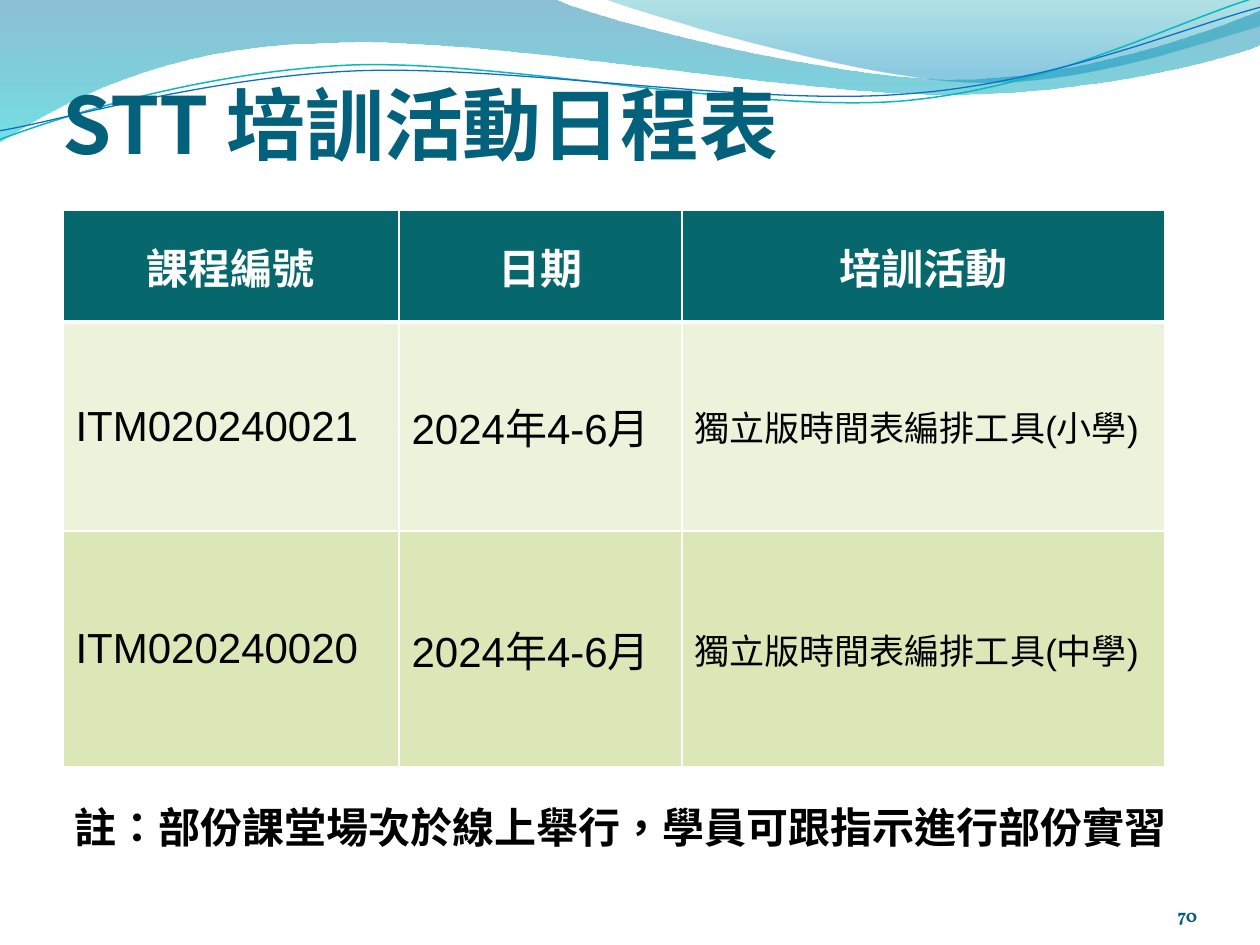
import lxml.etree
import pptx
import pptx.dml.color
import pptx.enum.text
import pptx.oxml.ns
import pptx.util

RGBColor = pptx.dml.color.RGBColor
ALIGN = pptx.enum.text.PP_ALIGN
ANCHOR = pptx.enum.text.MSO_ANCHOR
qn = pptx.oxml.ns.qn

EMU_PER_PX = 914400 / 126

WHITE = RGBColor(0xFF, 0xFF, 0xFF)
BLACK = RGBColor(0x00, 0x00, 0x00)
TITLE_BLUE = RGBColor(0x04, 0x61, 0x7B)
NUMBER_BLUE = RGBColor(0x04, 0x5D, 0x75)
HEADER_TEAL = RGBColor(0x06, 0x68, 0x6C)
ROW_FILLS = [RGBColor(0xED, 0xF3, 0xDB), RGBColor(0xDB, 0xE7, 0xB6)]
DEEP_BLUE = RGBColor(0x00, 0x74, 0xA1)
CYAN = RGBColor(0x00, 0xC6, 0xCF)
TEAL = RGBColor(0x00, 0xA1, 0xA9)
SKY_BLUE = RGBColor(0x00, 0x8B, 0xBF)
LINE_CYAN = RGBColor(0x0A, 0xB8, 0xBF)
LINE_BLUE = RGBColor(0x0F, 0x6F, 0xC6)

CJK_FONT = "Noto Sans CJK SC"

# Waves: a start point, then line ends (2 numbers) or Bezier curves (6 numbers)
# Filled waves carry gradient stops: position, colour, opacity in percent
FILLED_WAVES = [
    ([(0, 0), (554, -1), (600, 21, 837, 79, 955, 79),
      (1075, 79, 1207, 33, 1260, 11), (1261, 45),
      (1239, 55, 1096, 96, 940, 94), (784, 94, 481, 35, 324, 43),
      (163, 45, 58, 105, -1, 142), (0, 0)],
     [(0, DEEP_BLUE, 45), (1, CYAN, 55)]),
    ([(604, -1), (641, 14, 859, 78, 969, 82),
      (1079, 87, 1211, 40, 1260, 26), (1260, 0), (604, -1)],
     [(0, TEAL, 30), (0.8, SKY_BLUE, 45)]),
]
LINE_ROTATION = 357.3
LINE_WAVES = [
    ([(-3, 110), (59, 90, 200, 52, 350, 52), (498, 53, 745, 118, 897, 114),
      (1048, 109, 1184, 45, 1260, 27)], LINE_CYAN, 0.85),
    ([(-2, 101), (58, 94, 207, 57, 357, 58), (508, 59, 751, 112, 902, 107),
      (1052, 104, 1187, 53, 1263, 37)], LINE_BLUE, 0.75),
]

HEADERS = ["課程編號", "日期", "培訓活動"]
COURSES = [
    ["ITM020240021", "2024年4-6月", "獨立版時間表編排工具(小學)"],
    ["ITM020240020", "2024年4-6月", "獨立版時間表編排工具(中學)"],
]
COLUMN_WIDTHS = [336, 283, 483]
ROW_HEIGHTS = [112, 209, 236]
BODY_SIZES = [24, 24, 20]


def px(length):
    return pptx.util.Emu(round(length * EMU_PER_PX))


def write_text(frame, text, size, color, font, bold=False, align=ALIGN.LEFT):
    paragraph = frame.paragraphs[0]
    paragraph.alignment = align
    run = paragraph.add_run()
    run.text = text
    run.font.size = pptx.util.Pt(size)
    run.font.bold = bold
    run.font.color.rgb = color
    run.font.name = font
    properties = run.font._element
    properties.set("lang", "zh-TW")
    if font == CJK_FONT:
        lxml.etree.SubElement(properties, qn("a:ea")).set("typeface", font)


def add_text_box(slide, box, text, insets=None, anchor=ANCHOR.TOP, wrap=True,
                 **text_format):
    frame = slide.shapes.add_textbox(*map(px, box)).text_frame
    frame.word_wrap = wrap
    frame.vertical_anchor = anchor
    if insets:
        (frame.margin_left, frame.margin_top,
         frame.margin_right, frame.margin_bottom) = map(px, insets)
    write_text(frame, text, **text_format)
    return frame


def add_wave(slide, left, top, outline, close=False):
    points = [(px(left + x), px(top + y)) for segment in outline
              for x, y in zip(segment[::2], segment[1::2])]
    builder = slide.shapes.build_freeform(*points[0], scale=1.0)
    builder.add_line_segments(points[1:], close=close)
    shape = builder.convert_to_shape()
    shape.shadow.inherit = False
    # Join each three points of a curve into one Bezier segment
    lines = iter(list(shape._element.iter(qn("a:lnTo"))))
    for segment in outline[1:]:
        first = next(lines)
        if len(segment) == 6:
            first.tag = qn("a:cubicBezTo")
            for _ in range(2):
                line = next(lines)
                first.append(line[0])
                line.getparent().remove(line)
    return shape


def add_wave_banner(slide, left, top):
    for outline, stops in FILLED_WAVES:
        shape = add_wave(slide, left, top, outline, close=True)
        shape.line.fill.background()
        shape.fill.gradient()
        shape.fill.gradient_angle = 270
        for stop, (position, color, _) in zip(shape.fill.gradient_stops, stops):
            stop.position = position
            stop.color.rgb = color
        for node, (_, _, opacity) in zip(shape._element.spPr.iter(qn("a:srgbClr")), stops):
            lxml.etree.SubElement(node, qn("a:alpha")).set("val", str(opacity * 1000))
    for outline, color, width in LINE_WAVES:
        shape = add_wave(slide, left, top, outline)
        shape.rotation = LINE_ROTATION
        shape.fill.background()
        shape.line.color.rgb = color
        shape.line.width = pptx.util.Pt(width)


def set_borders(cell, top=1, bottom=1):
    properties = cell._tc.get_or_add_tcPr()
    for side, width in (("L", 1), ("R", 1), ("T", top), ("B", bottom)):
        line = lxml.etree.SubElement(properties, qn("a:ln" + side))
        line.set("w", str(pptx.util.Pt(width)))
        fill = lxml.etree.SubElement(line, qn("a:solidFill"))
        lxml.etree.SubElement(fill, qn("a:srgbClr")).set("val", str(WHITE))


def add_schedule(slide, left, top):
    rows = [HEADERS] + COURSES
    table = slide.shapes.add_table(
        len(rows), len(HEADERS), px(left), px(top),
        px(sum(COLUMN_WIDTHS)), px(sum(ROW_HEIGHTS))).table
    table.horz_banding = False
    for column, width in zip(table.columns, COLUMN_WIDTHS):
        column.width = px(width)
    for row_index, texts in enumerate(rows):
        table.rows[row_index].height = px(ROW_HEIGHTS[row_index])
        header = row_index == 0
        for column_index, text in enumerate(texts):
            cell = table.cell(row_index, column_index)
            cell.vertical_anchor = ANCHOR.MIDDLE
            # A thick rule parts the header from the body
            set_borders(cell, top=3 if row_index == 1 else 1, bottom=3 if header else 1)
            cell.fill.solid()
            cell.fill.fore_color.rgb = HEADER_TEAL if header else ROW_FILLS[row_index - 1]
            write_text(cell.text_frame, text, font="Arial", bold=header,
                       size=24 if header else BODY_SIZES[column_index],
                       color=WHITE if header else BLACK,
                       align=ALIGN.CENTER if header else ALIGN.LEFT)


def main():
    presentation = pptx.Presentation()
    presentation.slide_width = px(1260)
    presentation.slide_height = px(945)
    slide = presentation.slides.add_slide(presentation.slide_layouts[6])

    add_wave_banner(slide, 0, 0)
    # Title
    add_text_box(slide, (63, 53, 1134, 117), "STT 培訓活動日程表",
                 insets=(0, 6, 0, 0), anchor=ANCHOR.BOTTOM,
                 size=45, color=TITLE_BLUE, font=CJK_FONT, bold=True)
    # Slide number
    add_text_box(slide, (1092, 876, 105, 50), "70",
                 insets=(0, 0, 0, 0), anchor=ANCHOR.BOTTOM, size=10.5,
                 color=NUMBER_BLUE, font="Vollkorn", bold=True, align=ALIGN.RIGHT)
    add_schedule(slide, 63, 210)
    # Note below the table
    note = add_text_box(slide, (62, 795, 1139, 63),
                        "註：部份課堂場次於線上舉行，學員可跟指示進行部份實習",
                        wrap=False, size=24, color=BLACK, font=CJK_FONT, bold=True)
    note.auto_size = pptx.enum.text.MSO_AUTO_SIZE.SHAPE_TO_FIT_TEXT

    presentation.save("out.pptx")


if __name__ == "__main__":
    main()
